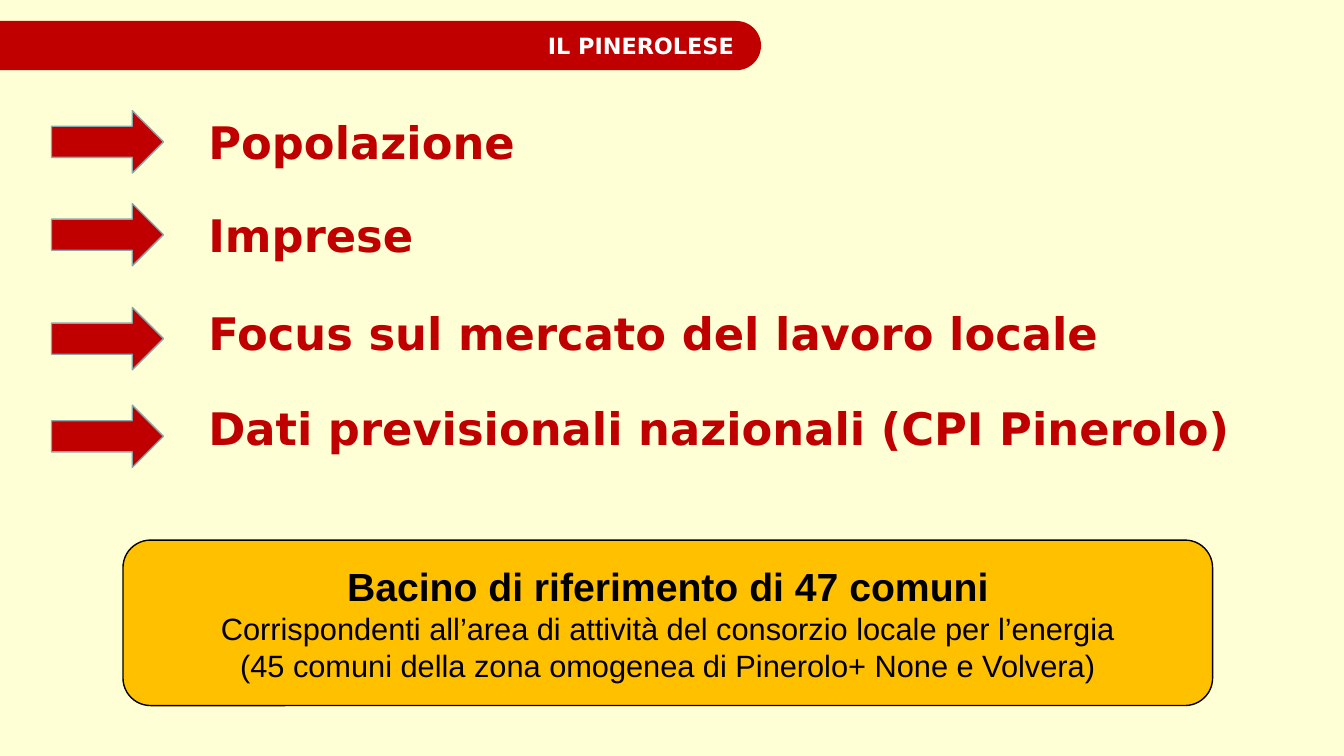
from pptx import Presentation
from pptx.dml.color import RGBColor
from pptx.enum.shapes import MSO_SHAPE
from pptx.enum.text import MSO_ANCHOR, PP_ALIGN
from pptx.util import Cm, Pt

ROUNDED = MSO_SHAPE.ROUNDED_RECTANGLE
ARROW = MSO_SHAPE.RIGHT_ARROW
MIDDLE = MSO_ANCHOR.MIDDLE
LEFT, CENTER, RIGHT = PP_ALIGN.LEFT, PP_ALIGN.CENTER, PP_ALIGN.RIGHT

TITLE = "IL PINEROLESE"
TOPICS = [
    ("Popolazione", 2.77, 2.79),
    ("Imprese", 5.11, 5.13),
    ("Focus sul mercato del lavoro locale", 7.59, 7.75),
    ("Dati previsionali nazionali (CPI Pinerolo)", 9.98, 10.21),
]
AREA_HEADING = "Bacino di riferimento di 47 comuni"
AREA_DETAILS = [
    "Corrispondenti all’area di attività del consorzio locale per l’energia",
    "(45 comuni della zona omogenea di Pinerolo+ None e Volvera)",
]

THEME = {
    "background": "FFFFD5",
    "red": "C00000",
    "amber": "FFC000",
    "arrow_line": "8AA6A8",
    "black": "000000",
    "white": "FFFFFF",
    "title": ("DejaVu Sans", 16, True, "white"),
    "topic": ("DejaVu Sans", 32, True, "red"),
    "heading": ("Arial", 28, True, "black"),
    "detail": ("Arial", 22, False, "black"),
}


def color(name):
    return RGBColor.from_string(THEME[name])


def add_panel(slide, kind, box, fill, line=None):
    shape = slide.shapes.add_shape(kind, *map(Cm, box))
    shape.shadow.inherit = False
    shape.fill.solid()
    shape.fill.fore_color.rgb = color(fill)
    if line:
        shape.line.color.rgb = color(line)
        shape.line.width = Pt(1)
    else:
        shape.line.fill.background()
    return shape


def write(text_frame, lines, align):
    text_frame.word_wrap = True
    text_frame.text = "\n".join(text for text, style in lines)
    for paragraph, (text, style) in zip(text_frame.paragraphs, lines):
        paragraph.alignment = align
        font = paragraph.runs[0].font
        font.name, size, font.bold, ink = THEME[style]
        font.size = Pt(size)
        font.color.rgb = color(ink)


def add_title(slide):
    bar = add_panel(slide, ROUNDED, (-1.42, 0.53, 20.6, 1.24), "red")
    bar.adjustments[0] = 0.5
    frame = bar.text_frame
    frame.margin_left = frame.margin_top = frame.margin_bottom = 0
    frame.margin_right = Cm(0.5)
    frame.vertical_anchor = MIDDLE
    write(frame, [(TITLE, "title")], RIGHT)


def add_topics(slide):
    for topic, text_top, arrow_top in TOPICS:
        add_panel(slide, ARROW, (1.3, arrow_top, 2.82, 1.57), "red", "arrow_line")
        label = slide.shapes.add_textbox(Cm(5), Cm(text_top), Cm(27.23), Cm(1.62))
        write(label.text_frame, [(topic, "topic")], LEFT)


def add_area(slide):
    panel = add_panel(slide, ROUNDED, (3.1, 13.61, 27.46, 4.17), "amber", "black")
    panel.text_frame.vertical_anchor = MIDDLE
    details = [(text, "detail") for text in AREA_DETAILS]
    write(panel.text_frame, [(AREA_HEADING, "heading")] + details, CENTER)


def main():
    presentation = Presentation()
    presentation.slide_width, presentation.slide_height = Cm(33.87), Cm(19.05)
    slide = presentation.slides.add_slide(presentation.slide_layouts[6])
    slide.background.fill.solid()
    slide.background.fill.fore_color.rgb = color("background")
    add_title(slide)
    add_area(slide)
    add_topics(slide)
    presentation.save("out.pptx")


if __name__ == "__main__":
    main()
